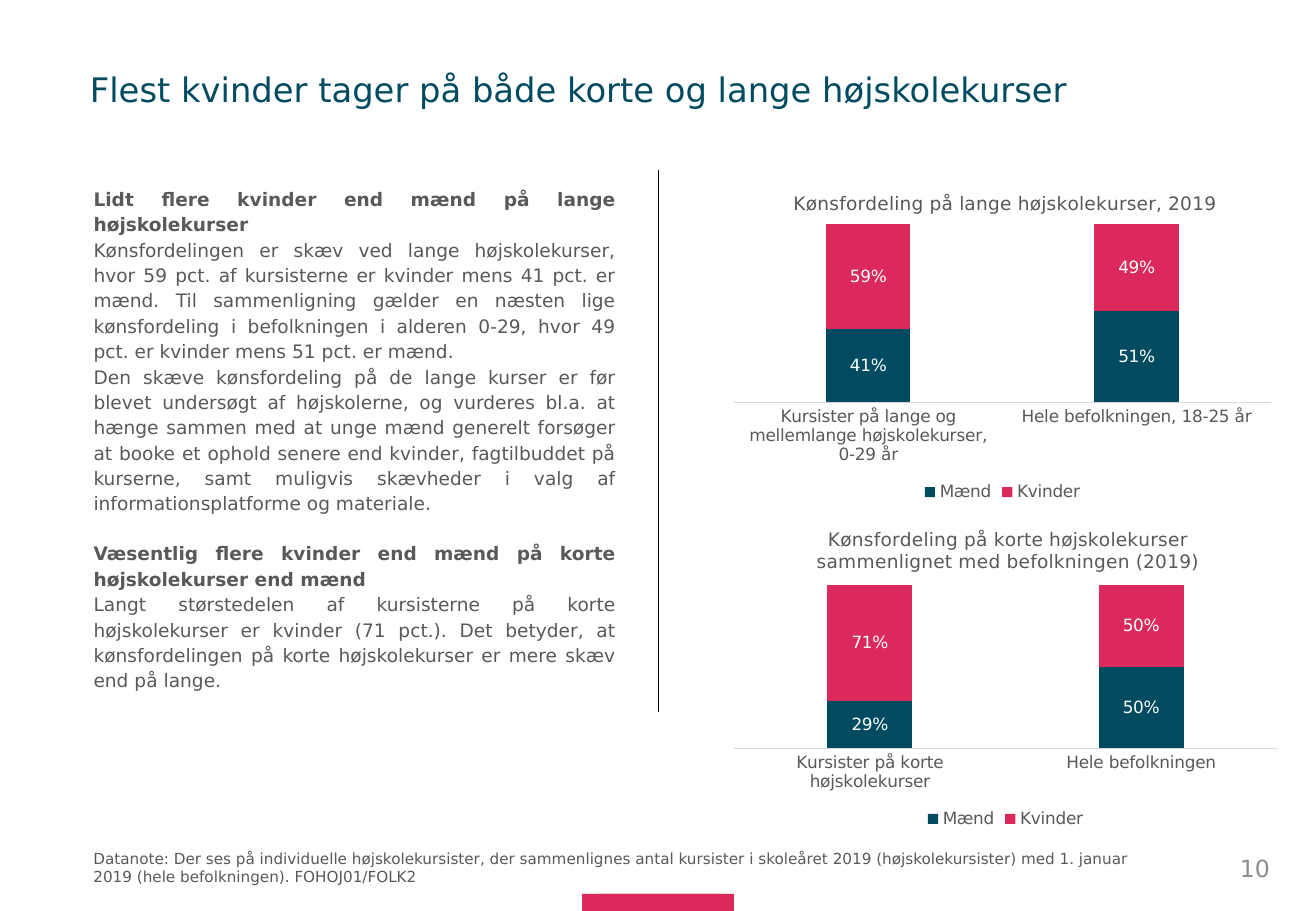
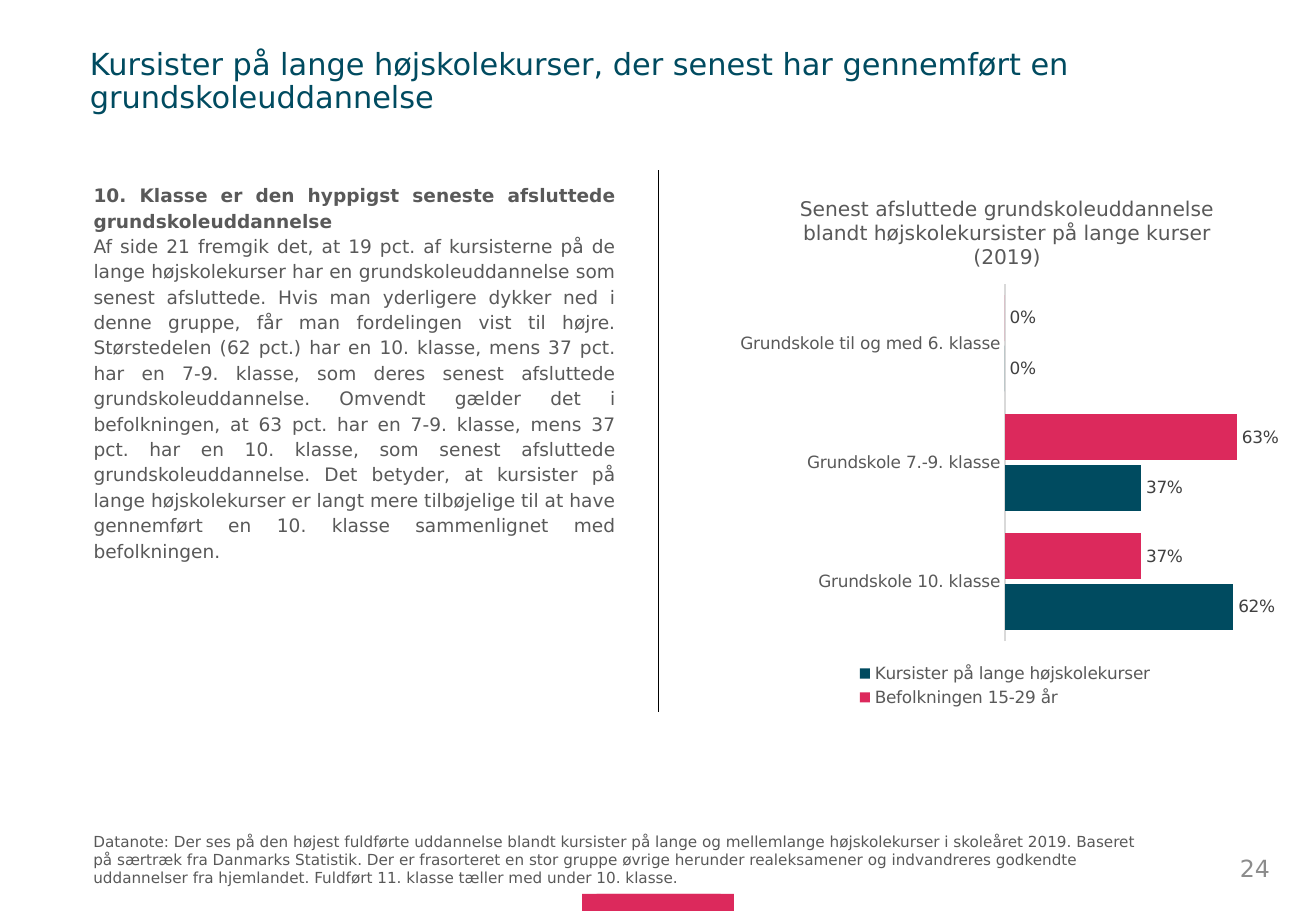
from pptx import Presentation
from pptx.chart.data import CategoryChartData
from pptx.dml.color import RGBColor
from pptx.enum import chart as ch, shapes, text as tx
from pptx.oxml import parse_xml
from pptx.oxml.ns import nsdecls
from pptx.util import Inches, Pt

FONT = "DejaVu Sans"
COLORS = {"teal": "004B60", "pink": "DC295C", "text": "595959", "page": "8C8C8C",
          "label": "404040", "axis": "D9D9D9", "rule": "000000", "white": "FFFFFF"}
MEN, WOMEN = "Mænd", "Kvinder"


def rgb(name):
    return RGBColor.from_string(COLORS[name])


def style(font, size, color, bold=False):
    font.name, font.size, font.bold = FONT, Pt(size), bold
    font.color.rgb = rgb(color)


def write(slide, paras, box, size, color="text", align=tx.PP_ALIGN.LEFT,
          anchor=tx.MSO_ANCHOR.TOP, insets=(0.1, 0.05, 0.1, 0.05), spacing=None):
    """Add a text box; each paragraph is a string or (string, bold, points after)."""
    frame = slide.shapes.add_textbox(*map(Inches, box)).text_frame
    frame.word_wrap, frame.vertical_anchor = True, anchor
    (frame.margin_left, frame.margin_top,
     frame.margin_right, frame.margin_bottom) = map(Inches, insets)
    for i, item in enumerate(paras):
        words, bold, after = (item, False, 0) if isinstance(item, str) else item
        para = frame.paragraphs[0] if i == 0 else frame.add_paragraph()
        para.alignment, para.line_spacing = align, spacing
        para.space_after = Pt(after)
        run = para.add_run()
        run.text = words
        style(run.font, size, color, bold)


def band(slide):
    for left, width in ((4.79, 1.25), (4.91, 1.02)):
        bar = slide.shapes.add_shape(shapes.MSO_SHAPE.RECTANGLE, Inches(left),
                                     Inches(7.36), Inches(width), Inches(0.14))
        bar.shadow.inherit = False
        bar.fill.solid()
        bar.fill.fore_color.rgb = rgb("pink")
        bar.line.fill.background()


def rule(slide):
    x = Inches(5.42)
    line = slide.shapes.add_connector(shapes.MSO_CONNECTOR.STRAIGHT,
                                      x, Inches(1.4), x, Inches(5.86))
    line.line.color.rgb = rgb("rule")
    line.line.width = Pt(1)
    line._element.spPr.append(parse_xml(f"<a:effectLst {nsdecls('a')}/>"))


def page(deck, title, number, body, note, size, top, body_top, note_top):
    """Add a slide with everything the pages share."""
    slide = deck.slides.add_slide(deck.slide_layouts[6])
    band(slide)
    write(slide, [title], (0.74, top, 9.34, 0.57), size, "teal",
          anchor=tx.MSO_ANCHOR.MIDDLE, insets=(0, 0.05, 0.1, 0.05), spacing=0.9)
    write(slide, body, (0.77, body_top, 4.3, 4.46), 11,
          align=tx.PP_ALIGN.JUSTIFY, insets=(0, 0, 0, 0), spacing=1.14)
    rule(slide)
    write(slide, [number], (7.65, 6.95, 2.9, 0.4), 14, "page",
          align=tx.PP_ALIGN.RIGHT, anchor=tx.MSO_ANCHOR.MIDDLE)
    write(slide, [note], (0.67, note_top, 8.8, 7.35 - note_top), 9)
    return slide


def layout(x, y, w=None, h=None):
    """Give a manual chart layout in fractions of the chart."""
    tags = [("xMode", "edge"), ("yMode", "edge"), ("x", x), ("y", y)]
    if w is not None:
        tags = [("layoutTarget", "inner")] + tags + [("w", w), ("h", h)]
    inner = "".join(f'<c:{tag} val="{val}"/>' for tag, val in tags)
    return parse_xml(f"<c:layout {nsdecls('c')}><c:manualLayout>{inner}"
                     "</c:manualLayout></c:layout>")


def place(parent, new, after=None):
    """Put a layout in its parent, replacing any layout already there."""
    for old in parent.findall(new.tag):
        parent.remove(old)
    if after is None:
        parent.insert(0, new)
    else:
        after.addnext(new)


def graph(slide, kind, box, title, cats, series, title_at, plot_at, size=11,
          gap=219, overlap=100, top=1, label="white",
          pos=ch.XL_LABEL_POSITION.CENTER, flip=False):
    data = CategoryChartData(number_format="0%")
    data.categories = cats
    for name, vals, _ in series:
        data.add_series(name, vals)
    chart = slide.shapes.add_chart(kind, *map(Inches, box), data).chart
    style(chart.font, 10, "rule")

    chart.has_title = True
    head = chart.chart_title
    head.text_frame.text = title
    style(head.text_frame.paragraphs[0].runs[0].font, size, "text")
    head.include_in_layout = False
    place(head._element, layout(*title_at), head._element.tx)

    chart.has_legend = True
    chart.legend.position = ch.XL_LEGEND_POSITION.BOTTOM
    chart.legend.include_in_layout = False
    style(chart.legend.font, 10, "text")

    axis = chart.category_axis
    axis.major_tick_mark = axis.minor_tick_mark = ch.XL_TICK_MARK.NONE
    axis.reverse_order = flip
    axis.format.line.color.rgb = rgb("axis")
    axis.format.line.width = Pt(0.75)
    style(axis.tick_labels.font, 10, "text")
    scale = chart.value_axis
    scale.visible = scale.has_major_gridlines = False
    scale.minimum_scale, scale.maximum_scale = 0, top

    plot = chart.plots[0]
    plot.gap_width, plot.overlap, plot.vary_by_categories = gap, overlap, False
    place(chart._chartSpace.chart.plotArea, layout(*plot_at))
    for bars, (_, _, color) in zip(plot.series, series):
        bars.format.fill.solid()
        bars.format.fill.fore_color.rgb = rgb(color)
        labels = bars.data_labels
        labels.show_value, labels.position = True, pos
        labels.number_format, labels.number_format_is_linked = "0%", False
        style(labels.font, 10, label)


def split(slide, box, title, cats, men, women, title_at, plot_at):
    """Stacked columns of men and women."""
    graph(slide, ch.XL_CHART_TYPE.COLUMN_STACKED, box, title, cats,
          [(MEN, men, "teal"), (WOMEN, women, "pink")], title_at, plot_at)


def gender(deck):
    body = [
        ("Lidt flere kvinder end mænd på lange højskolekurser", True, 0),
        "Kønsfordelingen er skæv ved lange højskolekurser, hvor 59 pct. af kursisterne er "
        "kvinder mens 41 pct. er mænd. Til sammenligning gælder en næsten lige "
        "kønsfordeling i befolkningen i alderen 0-29, hvor 49 pct. er kvinder mens 51 pct. "
        "er mænd.",
        ("Den skæve kønsfordeling på de lange kurser er før blevet undersøgt af "
         "højskolerne, og vurderes bl.a. at hænge sammen med at unge mænd generelt "
         "forsøger at booke et ophold senere end kvinder, fagtilbuddet på kurserne, samt "
         "muligvis skævheder i valg af informationsplatforme og materiale.", False, 14.6),
        ("Væsentlig flere kvinder end mænd på korte højskolekurser end mænd", True, 0),
        "Langt størstedelen af kursisterne på korte højskolekurser er kvinder (71 pct.). "
        "Det betyder, at kønsfordelingen på korte højskolekurser er mere skæv end på "
        "lange.",
    ]
    note = ("Datanote: Der ses på individuelle højskolekursister, der sammenlignes antal "
            "kursister i skoleåret 2019 (højskolekursister) med 1. januar 2019 (hele "
            "befolkningen). FOHOJ01/FOLK2")
    slide = page(deck, "Flest kvinder tager på både korte og lange højskolekurser", "10",
                 body, note, size=20, top=0.47, body_top=1.52, note_top=6.94)
    split(slide, (5.95, 4.17, 4.65, 2.69),
          "Kønsfordeling på korte højskolekurser sammenlignet med befolkningen (2019)",
          ["Kursister på korte højskolekurser", "Hele befolkningen"],
          (0.29, 0.5), (0.71, 0.5), (0.16, 0.05), (0.02, 0.24, 0.96, 0.5))
    split(slide, (5.95, 1.4, 4.6, 2.77), "Kønsfordeling på lange højskolekurser, 2019",
          ["Kursister på lange og mellemlange højskolekurser, 0-29 år",
           "Hele befolkningen, 18-25 år"],
          (0.41, 0.51), (0.59, 0.49), (0.12, 0.05), (0.02, 0.16, 0.96, 0.53))


def school(deck):
    body = [
        ("10. Klasse er den hyppigst seneste afsluttede grundskoleuddannelse", True, 0),
        "Af side 21 fremgik det, at 19 pct. af kursisterne på de lange højskolekurser har "
        "en grundskoleuddannelse som senest afsluttede. Hvis man yderligere dykker ned i "
        "denne gruppe, får man fordelingen vist til højre. Størstedelen (62 pct.) har en "
        "10. klasse, mens 37 pct. har en 7-9. klasse, som deres senest afsluttede "
        "grundskoleuddannelse. Omvendt gælder det i befolkningen, at 63 pct. har en 7-9. "
        "klasse, mens 37 pct. har en 10. klasse, som senest afsluttede "
        "grundskoleuddannelse. Det betyder, at kursister på lange højskolekurser er langt "
        "mere tilbøjelige til at have gennemført en 10. klasse sammenlignet med "
        "befolkningen.",
    ]
    note = ("Datanote: Der ses på den højest fuldførte uddannelse blandt kursister på lange "
            "og mellemlange højskolekurser i skoleåret 2019. Baseret på særtræk fra Danmarks "
            "Statistik. Der er frasorteret en stor gruppe øvrige herunder realeksamener og "
            "indvandreres godkendte uddannelser fra hjemlandet. Fuldført 11. klasse tæller "
            "med under 10. klasse.")
    slide = page(deck, "Kursister på lange højskolekurser, der senest har gennemført en "
                 "grundskoleuddannelse", "24", body, note,
                 size=18, top=0.39, body_top=1.49, note_top=6.8)
    graph(slide, ch.XL_CHART_TYPE.BAR_CLUSTERED, (6.01, 1.4, 4.52, 4.46),
          "Senest afsluttede grundskoleuddannelse blandt højskolekursister på lange kurser "
          "(2019)",
          ["Grundskole til og med 6. klasse", "Grundskole 7.-9. klasse",
           "Grundskole 10. klasse"],
          [("Befolkningen 15-29 år", (0, 0.63, 0.37), "pink"),
           ("Kursister på lange højskolekurser", (0, 0.37, 0.62), "teal")],
          (0.12, 0.04), (0.5, 0.21, 0.47, 0.66), size=12, gap=50, overlap=-10, top=0.7,
          label="label", pos=ch.XL_LABEL_POSITION.OUTSIDE_END, flip=True)


def main():
    deck = Presentation()
    deck.slide_width, deck.slide_height = Inches(10.83), Inches(7.5)
    gender(deck)
    school(deck)
    deck.save("out.pptx")


if __name__ == "__main__":
    main()
